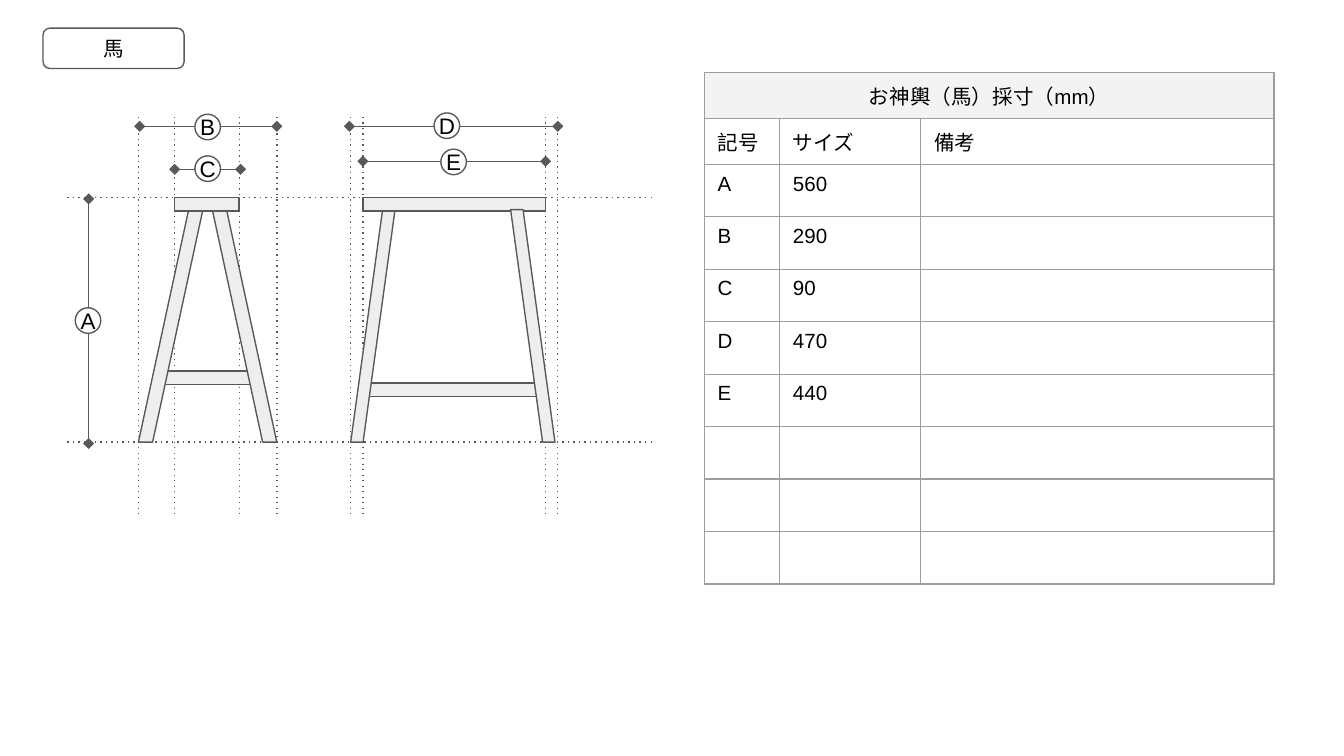
from dataclasses import dataclass

from lxml import etree
from pptx import Presentation
from pptx.dml.color import RGBColor
from pptx.enum import shapes, text
from pptx.oxml.ns import qn
from pptx.util import Inches, Pt

INK = RGBColor(0x59, 0x59, 0x59)
WOOD = RGBColor(0xEE, 0xEE, 0xEE)
WHITE = RGBColor(0xFF, 0xFF, 0xFF)
BLACK = RGBColor(0, 0, 0)
HEADER = RGBColor(0xF3, 0xF3, 0xF3)
BORDER = RGBColor(0x9E, 0x9E, 0x9E)
FONT = "Arial"
BADGE = 0.19
BEAM = 0.1
LEG_TOP, LEG_HEIGHT = 1.56, 1.73
KIND = shapes.MSO_SHAPE


@dataclass
class Part:
    left: float
    top: float
    width: float
    height: float
    kind: KIND = KIND.RECTANGLE
    adj: float | None = None
    flip: bool = False
    fill: RGBColor = WOOD


@dataclass
class Dimension:
    name: str
    start: tuple[float, float]
    end: tuple[float, float]
    badge: tuple[float, float]


def leg(left: float, width: float, adj: float, flip: bool = False) -> Part:
    return Part(left, LEG_TOP, width, LEG_HEIGHT, KIND.PARALLELOGRAM, adj, flip)


GUIDE_XS = (1.03, 1.3, 1.78, 2.06, 2.61, 2.7, 4.06, 4.15)
GUIDE_YS = (1.47, 3.29)
FRAME = [
    Part(1.17, 2.76, 0.74, BEAM),
    leg(1.03, 0.48, 0.78),
    leg(1.58, 0.48, 0.78, True),
    Part(1.3, 1.47, 0.48, BEAM),
    Part(2.73, 2.85, 1.3, BEAM),
    leg(2.61, 0.33, 0.72),
    Part(2.7, 1.47, 1.36, BEAM),
    leg(3.8, 0.33, 0.72, True),
]
DIMENSIONS = [
    Dimension("A", (0.66, 1.48), (0.66, 3.3), (0.56, 2.29)),
    Dimension("B", (2.06, 0.94), (1.04, 0.94), (1.45, 0.85)),
    Dimension("C", (1.79, 1.26), (1.3, 1.26), (1.45, 1.16)),
    Dimension("D", (4.15, 0.94), (2.6, 0.94), (3.23, 0.84)),
    Dimension("E", (4.06, 1.2), (2.7, 1.2), (3.28, 1.11)),
]
COLUMNS = (0.56, 1.05, 2.63)
ROW_HEIGHT = 0.26
EMPTY_SIZE = 17.4
ROWS = [
    ("お神輿（馬）採寸（mm）", "", ""),
    ("記号", "サイズ", "備考"),
    ("A", "560", ""),
    ("B", "290", ""),
    ("C", "90", ""),
    ("D", "470", ""),
    ("E", "440", ""),
] + [("", "", "")] * 3


def add_line(s, start: tuple[float, float], end: tuple[float, float], dotted: bool = False):
    line = s.shapes.add_connector(
        shapes.MSO_CONNECTOR.STRAIGHT, *(Inches(v) for v in (*start, *end)))
    line.line.color.rgb = INK
    line.line.width = Pt(0.75)
    ln = line.line._get_or_add_ln()
    if dotted:
        etree.SubElement(ln, qn("a:prstDash"), val="dot")
    else:
        for tag in ("a:headEnd", "a:tailEnd"):
            etree.SubElement(ln, qn(tag), type="diamond")
    etree.SubElement(line._element.spPr, qn("a:effectLst"))


def add_part(s, part: Part):
    sp = s.shapes.add_shape(
        part.kind, *(Inches(v) for v in (part.left, part.top, part.width, part.height)))
    sp.shadow.inherit = False
    sp.fill.solid()
    sp.fill.fore_color.rgb = part.fill
    sp.line.color.rgb = INK
    sp.line.width = Pt(0.75)
    if part.adj is not None:
        sp.adjustments[0] = part.adj
    if part.flip:
        sp._element.spPr.xfrm.set("flipH", "1")
    return sp


def add_run(p, words: str, size: float):
    r = p.add_run()
    r.text = words
    r.font.size = Pt(size)
    r.font.name = FONT
    r.font.color.rgb = BLACK


def add_label(s, part: Part, words: str, size: float, inset: float):
    tf = add_part(s, part).text_frame
    tf.margin_left = tf.margin_right = tf.margin_top = tf.margin_bottom = Inches(inset)
    tf.vertical_anchor = text.MSO_ANCHOR.MIDDLE
    p = tf.paragraphs[0]
    p.alignment = text.PP_ALIGN.CENTER
    add_run(p, words, size)


def set_empty_size(p):
    end = etree.SubElement(p._p, qn("a:endParaRPr"), sz=str(round(EMPTY_SIZE * 100)))
    etree.SubElement(end, qn("a:latin"), typeface=FONT)


def set_borders(cell):
    tc_pr = cell._tc.get_or_add_tcPr()
    for i, side in enumerate(("a:lnL", "a:lnR", "a:lnT", "a:lnB")):
        ln = etree.Element(qn(side), w=str(Pt(0.75)))
        fill = etree.SubElement(ln, qn("a:solidFill"))
        etree.SubElement(fill, qn("a:srgbClr"), val=str(BORDER))
        tc_pr.insert(i, ln)


def add_size_table(s):
    table = s.shapes.add_table(
        len(ROWS), len(COLUMNS), Inches(5.24), Inches(0.54),
        Inches(sum(COLUMNS)), Inches(ROW_HEIGHT * len(ROWS))).table
    table.first_row = table.horz_banding = False
    for column, width in zip(table.columns, COLUMNS):
        column.width = Inches(width)
    for i, row in enumerate(ROWS):
        for j, words in enumerate(row):
            cell = table.cell(i, j)
            cell.margin_left = cell.margin_right = Inches(0.1)
            cell.margin_top = cell.margin_bottom = Inches(0.06)
            if i == 0:
                cell.fill.solid()
                cell.fill.fore_color.rgb = HEADER
            else:
                cell.fill.background()
            set_borders(cell)
            p = cell.text_frame.paragraphs[0]
            if words:
                add_run(p, words, 11)
            else:
                set_empty_size(p)
    title = table.cell(0, 0)
    title.merge(table.cell(0, len(COLUMNS) - 1))
    title.text_frame.paragraphs[0].alignment = text.PP_ALIGN.CENTER


def main():
    prs = Presentation()
    prs.slide_width = Inches(10)
    prs.slide_height = prs.slide_width * 9 // 16
    s = prs.slides.add_slide(prs.slide_layouts[6])
    for y in GUIDE_YS:
        add_line(s, (0.5, y), (4.87, y), dotted=True)
    for x in GUIDE_XS:
        add_line(s, (x, 0.87), (x, 3.85), dotted=True)
    add_size_table(s)
    for part in FRAME:
        add_part(s, part)
    for dim in DIMENSIONS:
        add_line(s, dim.start, dim.end)
    for dim in DIMENSIONS:
        badge = Part(*dim.badge, BADGE, BADGE, KIND.OVAL, fill=WHITE)
        add_label(s, badge, dim.name, 12, 0)
    tag = Part(0.32, 0.21, 1.05, 0.3, KIND.ROUNDED_RECTANGLE, 0.17, fill=WHITE)
    add_label(s, tag, "馬", 11, 0.1)
    prs.save("out.pptx")


if __name__ == "__main__":
    main()
